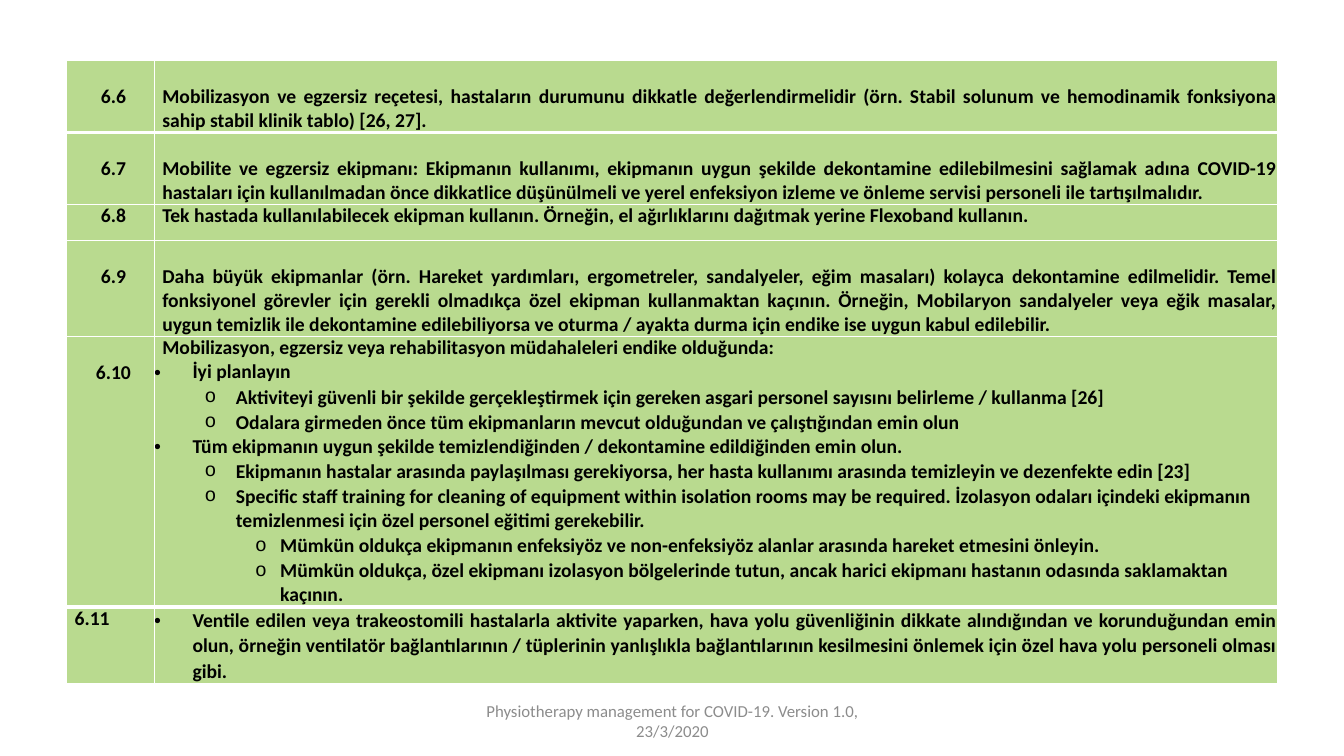
from dataclasses import dataclass
from lxml import etree
from pptx import Presentation, util as u
from pptx.dml.color import RGBColor
from pptx.enum import text as t
from pptx.oxml.ns import qn

PX = 9144  # one px is a hundredth of an inch
MID, JUST, LEFT = t.PP_ALIGN.CENTER, t.PP_ALIGN.JUSTIFY, t.PP_ALIGN.LEFT


@dataclass(frozen=True)
class Theme:
    font: str = "Calibri"
    ink: str = "000000"
    green: str = "B9DA8F"
    white: str = "FFFFFF"
    grey: str = "8C8C8C"
    body: int = 14
    small: int = 12
    thin: int = 1
    thick: int = 3
    line: int = 24  # height of one body line, px


# Paragraph kinds: level, left, indent, bullet, bullet font
KINDS = {
    "num": (0, 6, 0, None, None),
    "flat": (0, 8, 0, None, None),
    "dot": (0, 38, -38, "•", "Arial"),
    "ring": (1, 81, -31, "o", "Courier New"),
    "deep": (2, 125, -25, "o", "Courier New"),
}

# Rows: number, height, blank lines above (number, text), alignment (number, text), paragraphs
# Paragraphs: kind, text, space before, line spacing
ROWS = [
    ("6.6", 71, (1, 1), (MID, JUST), [
        ("flat", "Mobilizasyon ve egzersiz reçetesi, hastaların durumunu dikkatle değerlendirmelidir "
         "(örn. Stabil solunum ve hemodinamik fonksiyona sahip stabil klinik tablo) [26, 27].", 0, 1)]),
    ("6.7", 71, (1, 1), (MID, JUST), [
        ("flat", "Mobilite ve egzersiz ekipmanı: Ekipmanın kullanımı, ekipmanın uygun şekilde "
         "dekontamine edilebilmesini sağlamak adına COVID-19 hastaları için kullanılmadan önce "
         "dikkatlice düşünülmeli ve yerel enfeksiyon izleme ve önleme servisi personeli ile "
         "tartışılmalıdır.", 0, 1)]),
    ("6.8", 36, (0, 0), (MID, LEFT), [
        ("flat", "Tek hastada kullanılabilecek ekipman kullanın. Örneğin, el ağırlıklarını "
         "dağıtmak yerine Flexoband kullanın.", 0, 1)]),
    ("6.9", 95, (1, 1), (MID, JUST), [
        ("flat", "Daha büyük ekipmanlar (örn. Hareket yardımları, ergometreler, sandalyeler, eğim "
         "masaları) kolayca dekontamine edilmelidir. Temel fonksiyonel görevler için gerekli "
         "olmadıkça özel ekipman kullanmaktan kaçının. Örneğin, Mobilaryon sandalyeler veya eğik "
         "masalar, uygun temizlik ile dekontamine edilebiliyorsa ve oturma / ayakta durma için "
         "endike ise uygun kabul edilebilir.", 0, 1)]),
    ("6.10", 268, (1, 0), (MID, LEFT), [
        ("flat", "Mobilizasyon, egzersiz veya rehabilitasyon müdahaleleri endike olduğunda:", 0, 1),
        ("dot", "İyi planlayın", 0.1, 1),
        ("ring", "Aktiviteyi güvenli bir şekilde gerçekleştirmek için gereken asgari personel "
         "sayısını belirleme / kullanma [26]", 1, 0.98),
        ("ring", "Odalara girmeden önce tüm ekipmanların mevcut olduğundan ve çalıştığından "
         "emin olun", 1.1, 1),
        ("dot", "Tüm ekipmanın uygun şekilde temizlendiğinden / dekontamine edildiğinden "
         "emin olun.", 0, 1),
        ("ring", "Ekipmanın hastalar arasında paylaşılması gerekiyorsa, her hasta kullanımı "
         "arasında temizleyin ve dezenfekte edin [23]", 0.9, 1),
        ("ring", "Specific staff training for cleaning of equipment within isolation rooms may be "
         "required. İzolasyon odaları içindeki ekipmanın temizlenmesi için özel personel eğitimi "
         "gerekebilir.", 1.1, 1),
        ("deep", "Mümkün oldukça ekipmanın enfeksiyöz ve non-enfeksiyöz alanlar arasında hareket "
         "etmesini önleyin.", 1.1, 1),
        ("deep", "Mümkün oldukça, özel ekipmanı izolasyon bölgelerinde tutun, ancak harici "
         "ekipmanı hastanın odasında saklamaktan kaçının.", 0.8, 1)]),
    ("6.11", 76, (0, 0), (LEFT, JUST), [
        ("dot", "Ventile edilen veya trakeostomili hastalarla aktivite yaparken, hava yolu "
         "güvenliğinin dikkate alındığından ve korunduğundan emin olun, örneğin ventilatör "
         "bağlantılarının / tüplerinin yanlışlıkla bağlantılarının kesilmesini önlemek için özel "
         "hava yolu personeli olması gibi.", 0, 1.07)]),
]
HEAVY = {1, 5}  # row boundaries with a thick rule


def put(obj, **vals):
    for key, val in vals.items():
        setattr(obj, key, val)


class Deck:
    def __init__(self, theme):
        self.theme = theme
        self.prs = Presentation()
        put(self.prs, slide_width=1333 * PX, slide_height=750 * PX)
        self.slide = self.prs.slides.add_slide(self.prs.slide_layouts[6])

    def words(self, par, copy, size, ink, bold=False):
        run = par.add_run()
        run.text = copy
        put(run.font, name=self.theme.font, size=u.Pt(size), bold=bold)
        run.font.color.rgb = RGBColor.from_string(ink)

    def para(self, par, kind, copy, before, lead, align):
        level, left, indent, mark, face = KINDS[kind]
        put(par, level=level, alignment=align, space_before=u.Pt(before), line_spacing=lead)
        props = par._p.get_or_add_pPr()
        props.set("marL", str(left * PX))
        props.set("indent", str(indent * PX))
        if mark:
            etree.SubElement(props, qn("a:buFont"), typeface=face)
            etree.SubElement(props, qn("a:buChar"), char=mark)
        self.words(par, copy, self.theme.body, self.theme.ink, True)

    def edge(self, cell, rules):
        """Set the left, right, top and bottom borders, in points."""
        props = cell._tc.get_or_add_tcPr()
        for i, (side, width) in enumerate(zip("LRTB", rules)):
            line = etree.Element(qn(f"a:ln{side}"), w=str(u.Pt(width)))
            fill = etree.SubElement(line, qn("a:solidFill"))
            etree.SubElement(fill, qn("a:srgbClr"), val=self.theme.white)
            props.insert(i, line)

    def cell(self, cell, paras, align, gap, rules):
        put(cell, margin_left=0, margin_right=0, margin_bottom=0,
            margin_top=gap * self.theme.line * PX)
        cell.fill.solid()
        cell.fill.fore_color.rgb = RGBColor.from_string(self.theme.green)
        self.edge(cell, rules)
        frame = cell.text_frame
        for i, item in enumerate(paras):
            par = frame.add_paragraph() if i else frame.paragraphs[0]
            self.para(par, *item, align)

    def table(self, left, top, cols, rows):
        high = sum(row[1] for row in rows)
        box = (left, top, sum(cols), high)
        grid = self.slide.shapes.add_table(len(rows), len(cols), *(n * PX for n in box)).table
        put(grid, first_row=False, horz_banding=False)
        for col, wide in zip(grid.columns, cols):
            col.width = wide * PX
        th = self.theme
        for r, (num, tall, gaps, aligns, paras) in enumerate(rows):
            grid.rows[r].height = tall * PX
            above, below = (th.thick if n in HEAVY else th.thin for n in (r, r + 1))
            kind = "num" if aligns[0] == MID else "flat"
            for c, body in enumerate(([(kind, num, 0, 1)], paras)):
                self.cell(grid.cell(r, c), body, aligns[c], gaps[c],
                          (th.thin, th.thin, above, below))

    def label(self, box, copy):
        frame = self.slide.shapes.add_textbox(*(n * PX for n in box)).text_frame
        put(frame, word_wrap=True, vertical_anchor=t.MSO_ANCHOR.MIDDLE)
        par = frame.paragraphs[0]
        par.alignment = MID
        self.words(par, copy, self.theme.small, self.theme.grey)


def main():
    deck = Deck(Theme())
    deck.table(66, 60, (87, 1114), ROWS)
    deck.label((442, 695, 450, 40),
               "Physiotherapy management for COVID-19. Version 1.0, 23/3/2020")
    deck.prs.save("out.pptx")


if __name__ == "__main__":
    main()
